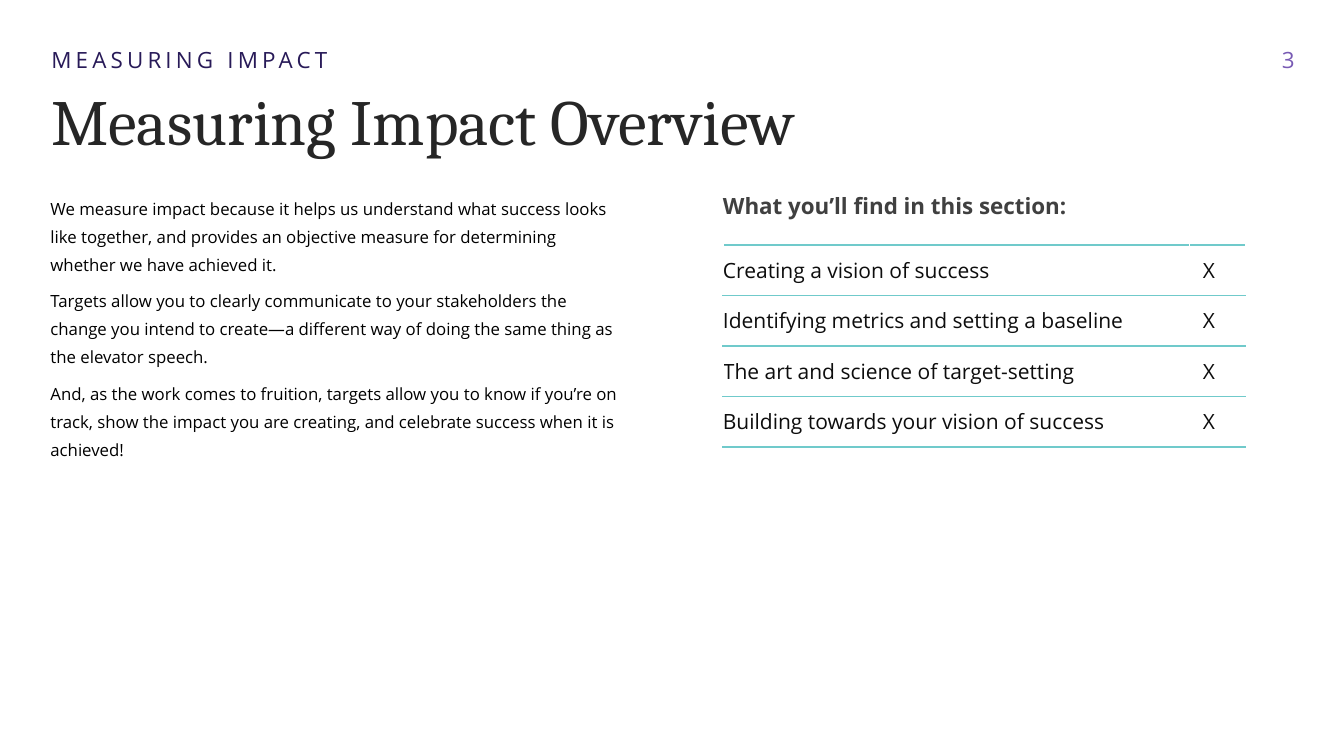
from dataclasses import dataclass

from lxml.etree import SubElement
from pptx import Presentation
from pptx.dml.color import RGBColor
from pptx.enum.text import MSO_ANCHOR, MSO_AUTO_SIZE, PP_ALIGN
from pptx.oxml.ns import qn
from pptx.util import Inches, Pt


@dataclass(frozen=True)
class Style:
    size: int
    color: str
    font: str = "Open Sans"
    bold: bool = False


@dataclass(frozen=True)
class Theme:
    kicker: Style = Style(16, "281A58")
    page_number: Style = Style(16, "785AB4")
    title: Style = Style(46, "262626", "Cambria")
    body: Style = Style(12, "000000")
    heading: Style = Style(16, "404040", bold=True)
    table: Style = Style(15, "0D0D0D")
    rule: str = "70CACB"
    blank_rule: str = "FFFFFF"


THEME = Theme()

INTRODUCTION = [
    "We measure impact because it helps us understand what success looks like together, "
    "and provides an objective measure for determining whether we have achieved it.",
    "Targets allow you to clearly communicate to your stakeholders the change you intend "
    "to create—a different way of doing the same thing as the elevator speech.",
    "And, as the work comes to fruition, targets allow you to know if you’re on track, "
    "show the impact you are creating, and celebrate success when it is achieved!",
]
SECTIONS = [
    ("Creating a vision of success", "X"),
    ("Identifying metrics and setting a baseline", "X"),
    ("The art and science of target-setting", "X"),
    ("Building towards your vision of success", "X"),
]
BLANK_ROWS = 3


def format_paragraph(paragraph, style, align=PP_ALIGN.LEFT):
    paragraph.alignment = align
    for run in paragraph.runs:
        run.font.name = style.font
        run.font.size = Pt(style.size)
        run.font.bold = style.bold
        run.font.color.rgb = RGBColor.from_string(style.color)


def fill_text(shape, box, paragraphs, style, align=PP_ALIGN.LEFT, anchor=MSO_ANCHOR.TOP,
              line_spacing=None, space_after=0, indent=0):
    """Place a text shape without insets or bullets and write its paragraphs."""
    shape.left, shape.top, shape.width, shape.height = (Inches(length) for length in box)
    frame = shape.text_frame
    frame.text = "\n".join(paragraphs)
    frame.word_wrap = True
    frame.auto_size = MSO_AUTO_SIZE.NONE
    frame.vertical_anchor = anchor
    frame.margin_left = frame.margin_right = frame.margin_top = frame.margin_bottom = 0
    for paragraph in frame.paragraphs:
        properties = paragraph._p.get_or_add_pPr()
        properties.set("marL", str(Inches(indent)))
        properties.set("indent", "0")
        SubElement(properties, qn("a:buNone"))
        paragraph.space_before = Pt(0)
        paragraph.space_after = Pt(space_after)
        if line_spacing:
            paragraph.line_spacing = Pt(line_spacing)
        format_paragraph(paragraph, style, align)


def add_label(slide, box, text, style, **options):
    label = slide.shapes.add_textbox(0, 0, 0, 0)
    fill_text(label, box, [text], style, **options)
    return label


def set_borders(cell, horizontal_colors):
    """Draw white sides, and top and bottom lines in the two given colours."""
    top, bottom = horizontal_colors
    sides = {"L": THEME.blank_rule, "R": THEME.blank_rule, "T": top, "B": bottom}
    properties = cell._tc.get_or_add_tcPr()
    for side, color in sides.items():
        line = SubElement(properties, qn(f"a:ln{side}"), w=str(Pt(1)))
        SubElement(SubElement(line, qn("a:solidFill")), qn("a:srgbClr"), val=color)


def add_section_table(slide):
    row_count = len(SECTIONS) + BLANK_ROWS
    frame = slide.shapes.add_table(row_count, 2, Inches(7.17), Inches(2.43),
                                   Inches(5.18), Inches(3.51))
    table = frame.table
    table.first_row = table.horz_banding = False
    for column, width in zip(table.columns, (4.63, 0.55)):
        column.width = Inches(width)

    line_colors = [THEME.rule] * (len(SECTIONS) + 1) + [THEME.blank_rule] * BLANK_ROWS
    rows = SECTIONS + [("", "")] * BLANK_ROWS
    cell_formats = ((0.1, PP_ALIGN.LEFT), (0.3, PP_ALIGN.RIGHT))
    for row_index, texts in enumerate(rows):
        for column_index, (text, (margin, align)) in enumerate(zip(texts, cell_formats)):
            cell = table.cell(row_index, column_index)
            set_borders(cell, line_colors[row_index:row_index + 2])
            cell.fill.background()
            cell.vertical_anchor = MSO_ANCHOR.MIDDLE
            cell.margin_left = 0
            cell.margin_right = Inches(margin)
            cell.text_frame.text = text
            format_paragraph(cell.text_frame.paragraphs[0], THEME.table, align)


def main():
    presentation = Presentation()
    presentation.slide_width = Inches(13.33)
    presentation.slide_height = Inches(7.5)
    two_content_layout = presentation.slide_layouts[3]
    slide = presentation.slides.add_slide(two_content_layout)
    title, introduction, heading = slide.placeholders

    kicker = add_label(slide, (0.5, 0.46, 8.45, 0.27), "MEASURING IMPACT",
                       THEME.kicker, indent=0.01)
    kicker_run = kicker.text_frame.paragraphs[0].runs[0]
    kicker_run.font._element.set("spc", "300")
    add_label(slide, (9.77, 0.46, 3.07, 0.27), "3", THEME.page_number,
              align=PP_ALIGN.RIGHT, anchor=MSO_ANCHOR.MIDDLE)

    fill_text(title, (0.5, 0.8, 8.74, 0.77), ["Measuring Impact Overview"],
              THEME.title, space_after=24, indent=0.01)
    fill_text(introduction, (0.5, 1.89, 5.67, 3.11), INTRODUCTION, THEME.body,
              line_spacing=20, space_after=6)
    fill_text(heading, (7.17, 1.89, 5.67, 1.01), ["What you’ll find in this section:"],
              THEME.heading, line_spacing=20, space_after=6)
    add_section_table(slide)
    presentation.save("out.pptx")


if __name__ == "__main__":
    main()
